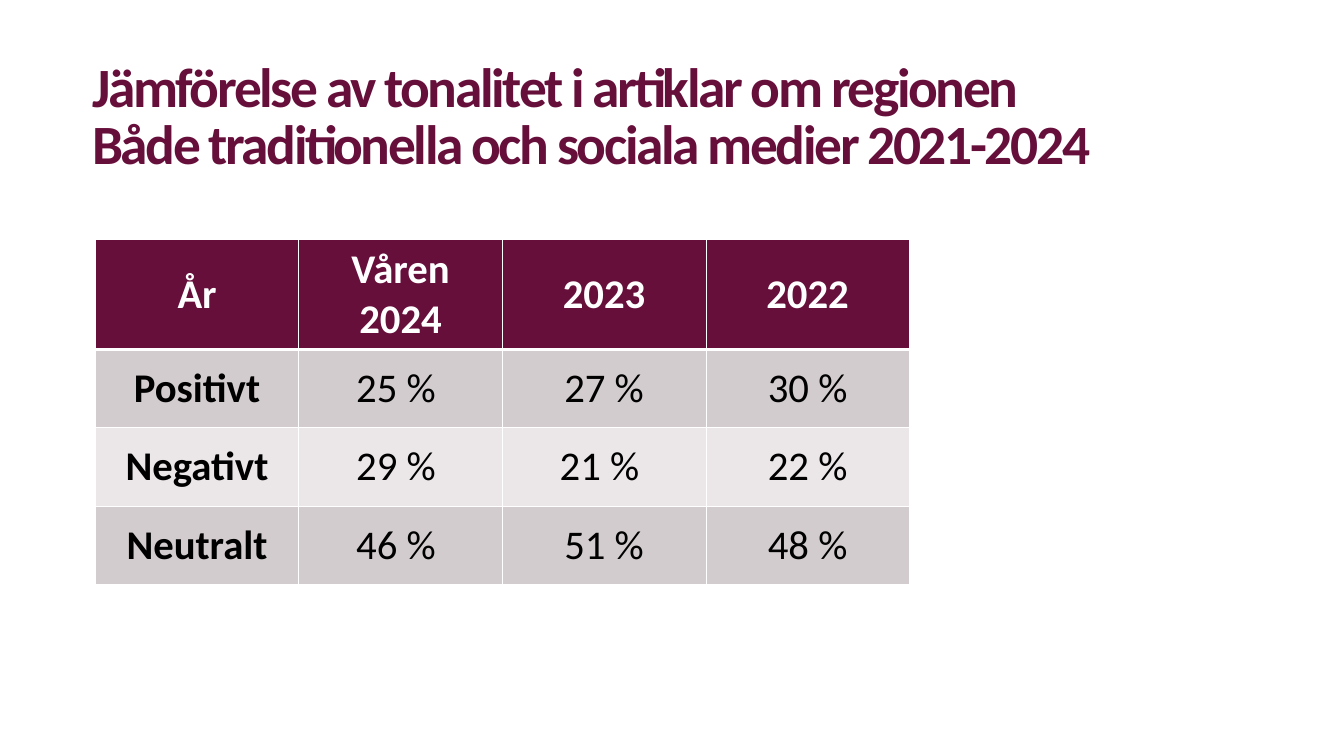
"""Build a slide with a table comparing the tone of articles about the region."""
import pptx
import pptx.dml.color
import pptx.enum.text
import pptx.oxml
import pptx.oxml.ns
import pptx.util
from pptx.util import Inches

PLUM = pptx.dml.color.RGBColor(0x67, 0x0F, 0x3B)
DARK_BAND = pptx.dml.color.RGBColor(0xD3, 0xCC, 0xCE)
LIGHT_BAND = pptx.dml.color.RGBColor(0xEB, 0xE7, 0xE8)
WHITE = pptx.dml.color.RGBColor(0xFF, 0xFF, 0xFF)
BLACK = pptx.dml.color.RGBColor(0, 0, 0)

TITLE = (
    "Jämförelse av tonalitet i artiklar om regionen\v"
    "Både traditionella och sociala medier 2021-2024"
)
TONE_ROWS = [
    ["År", "Våren 2024", "2023", "2022"],
    ["Positivt", "25 % ", "27 %", "30 %"],
    ["Negativt", "29 % ", "21 % ", "22 %"],
    ["Neutralt", "46 % ", "51 %", "48 %"],
]
ROW_FILLS = [PLUM, DARK_BAND, LIGHT_BAND, DARK_BAND]
ROW_HEIGHTS = [1.81, 1.28, 1.28, 1.28]
COLUMN_WIDTH = 3.33


def format_runs(paragraph, size, color, bold):
    for run in paragraph.runs:
        run.font.name = "Calibri"
        run.font.size = pptx.util.Pt(size)
        run.font.color.rgb = color
        run.font.bold = bold


def add_borders(cell, bottom_width):
    properties = cell._tc.get_or_add_tcPr()
    for index, side in enumerate("LRTB"):
        width = pptx.util.Pt(bottom_width if side == "B" else 1)
        line = pptx.oxml.parse_xml(
            f'<a:ln{side} {pptx.oxml.ns.nsdecls("a")} w="{width}">'
            f'<a:solidFill><a:srgbClr val="{WHITE}"/></a:solidFill></a:ln{side}>'
        )
        properties.insert(index, line)


presentation = pptx.Presentation()
presentation.slide_width = Inches(21.99)
presentation.slide_height = Inches(12.37)
slide = presentation.slides.add_slide(presentation.slide_layouts[6])

title_box = slide.shapes.add_textbox(Inches(1.51), Inches(2.09), Inches(18.96), Inches(1.8))
title_frame = title_box.text_frame
title_frame.word_wrap = True
title_frame.vertical_anchor = pptx.enum.text.MSO_ANCHOR.BOTTOM
title_frame.margin_left = title_frame.margin_top = title_frame.margin_right = 0
title_frame.margin_bottom = Inches(1.02)
title_frame.text = TITLE
title_paragraph = title_frame.paragraphs[0]
title_paragraph.line_spacing = 0.85
format_runs(title_paragraph, 65.3, PLUM, True)
for run in title_paragraph.runs:
    run.font._element.set("spc", "-280")

table_frame = slide.shapes.add_table(
    len(TONE_ROWS), len(TONE_ROWS[0]), Inches(1.56), Inches(3.91),
    Inches(COLUMN_WIDTH * len(TONE_ROWS[0])), Inches(sum(ROW_HEIGHTS)),
)
table = table_frame.table
for column in table.columns:
    column.width = Inches(COLUMN_WIDTH)

for row_index, labels in enumerate(TONE_ROWS):
    table.rows[row_index].height = Inches(ROW_HEIGHTS[row_index])
    is_header = row_index == 0
    for column_index, label in enumerate(labels):
        is_heading = is_header or column_index == 0
        cell = table.cell(row_index, column_index)
        cell.fill.solid()
        cell.fill.fore_color.rgb = ROW_FILLS[row_index]
        cell.vertical_anchor = pptx.enum.text.MSO_ANCHOR.MIDDLE
        cell.margin_left = cell.margin_right = Inches(0.16 if is_heading else 0.01)
        cell.margin_top = cell.margin_bottom = Inches(0.08 if is_heading else 0)
        cell.text_frame.text = label
        paragraph = cell.text_frame.paragraphs[0]
        paragraph.alignment = pptx.enum.text.PP_ALIGN.CENTER
        format_runs(paragraph, 48, WHITE if is_header else BLACK, is_heading)
        add_borders(cell, 3 if is_header else 1)

presentation.save("out.pptx")
